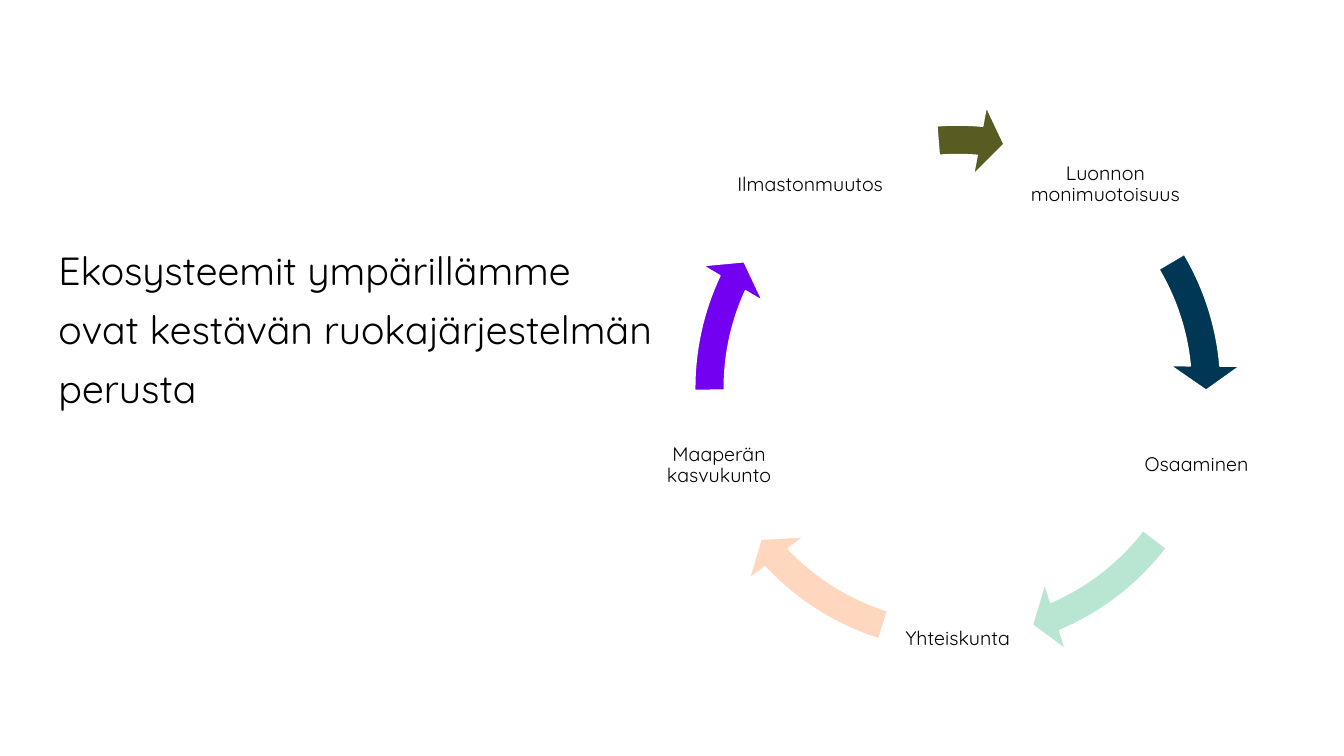
from math import cos, radians, sin

from lxml.etree import SubElement
from pptx import Presentation
from pptx.dml.color import RGBColor
from pptx.enum.shapes import MSO_SHAPE
from pptx.enum.text import MSO_ANCHOR, MSO_AUTO_SIZE, PP_ALIGN
from pptx.oxml.ns import qn
from pptx.util import Inches, Pt

# Ring geometry in inches
MID_X, MID_Y = 9.5, 3.85
RADIUS = 2.49
RING = 5.61
TALL = 1.5

# Label, label width, arrow colour, arrow end and start angles
STEPS = [
    ("Luonnon monimuotoisuus", 2, "003755", 212.94, 197.66),
    ("Osaaminen", 1.5, "B9E6D2", 40.16, 22.53),
    ("Yhteiskunta", 1.5, "FFD7BE", 82.12, 64.49),
    ("Maaperän kasvukunto", 1.5, "7300F0", 122.99, 107.7),
    ("Ilmastonmuutos", 2.53, "585C23", 165.07, 159.27),
]


def paint(target, code):
    target.rgb = RGBColor.from_string(code)


class Deck:
    font = "Quicksand"
    ink = "000000"

    def __init__(self):
        self.file = Presentation()
        self.file.slide_width = Inches(13.33)
        self.file.slide_height = Inches(7.5)
        self.page = self.file.slides.add_slide(self.file.slide_layouts[1])
        title = self.page.shapes.title
        title.element.getparent().remove(title.element)
        self.group = None

    def style(self, frame, text, size, space):
        frame.text = text
        frame.word_wrap = True
        frame.auto_size = MSO_AUTO_SIZE.NONE
        para = frame.paragraphs[0]
        para.line_spacing = space
        para.space_before = Pt(0)
        for run in para.runs:
            run.font.name = self.font
            run.font.size = Pt(size)
            paint(run.font.color, self.ink)
        return para

    def body(self, text, left, top, wide, high):
        box = self.page.placeholders[1]
        box.left, box.top = Inches(left), Inches(top)
        box.width, box.height = Inches(wide), Inches(high)
        para = self.style(box.text_frame, text, 28, 1.25)
        para.alignment = PP_ALIGN.LEFT
        para.space_after = Pt(4)
        props = para._p.get_or_add_pPr()
        props.set("marL", "0")
        props.set("indent", "0")
        SubElement(props, qn("a:buNone"))

    def label(self, text, mid_x, mid_y, wide, high):
        box = self.group.shapes.add_textbox(
            Inches(mid_x - wide / 2), Inches(mid_y - high / 2),
            Inches(wide), Inches(high))
        frame = box.text_frame
        frame.vertical_anchor = MSO_ANCHOR.MIDDLE
        frame.margin_left = frame.margin_right = Inches(0.02)
        frame.margin_top = frame.margin_bottom = Inches(0.02)
        self.style(frame, text, 14, 0.9).alignment = PP_ALIGN.CENTER

    def arrow(self, code, end, start):
        shape = self.group.shapes.add_shape(
            MSO_SHAPE.CIRCULAR_ARROW,
            Inches(MID_X - RING / 2), Inches(MID_Y - RING / 2),
            Inches(RING), Inches(RING))
        for spot, value in enumerate((0.052, 3.357, end, start, 0.061)):
            shape.adjustments[spot] = value
        shape.shadow.inherit = False
        shape.fill.solid()
        paint(shape.fill.fore_color, code)
        paint(shape.line.color, "FFFFFF")
        shape.line.width = Pt(1)

    def cycle(self, steps):
        self.group = self.page.shapes.add_group_shape()
        turn = 360 / len(steps)
        for spot, (text, wide, code, end, start) in enumerate(steps):
            angle = radians(-90 + turn * (spot + 0.5))
            self.label(text, MID_X + RADIUS * cos(angle),
                       MID_Y + RADIUS * sin(angle), wide, TALL)
            self.arrow(code, end, start)


def main():
    deck = Deck()
    # Statement on the left
    deck.body("Ekosysteemit ympärillämme ovat kestävän "
              "ruokajärjestelmän perusta", 0.48, 2.28, 6.18, 4.57)
    # Cycle on the right
    deck.cycle(STEPS)
    deck.file.save("out.pptx")


if __name__ == "__main__":
    main()
